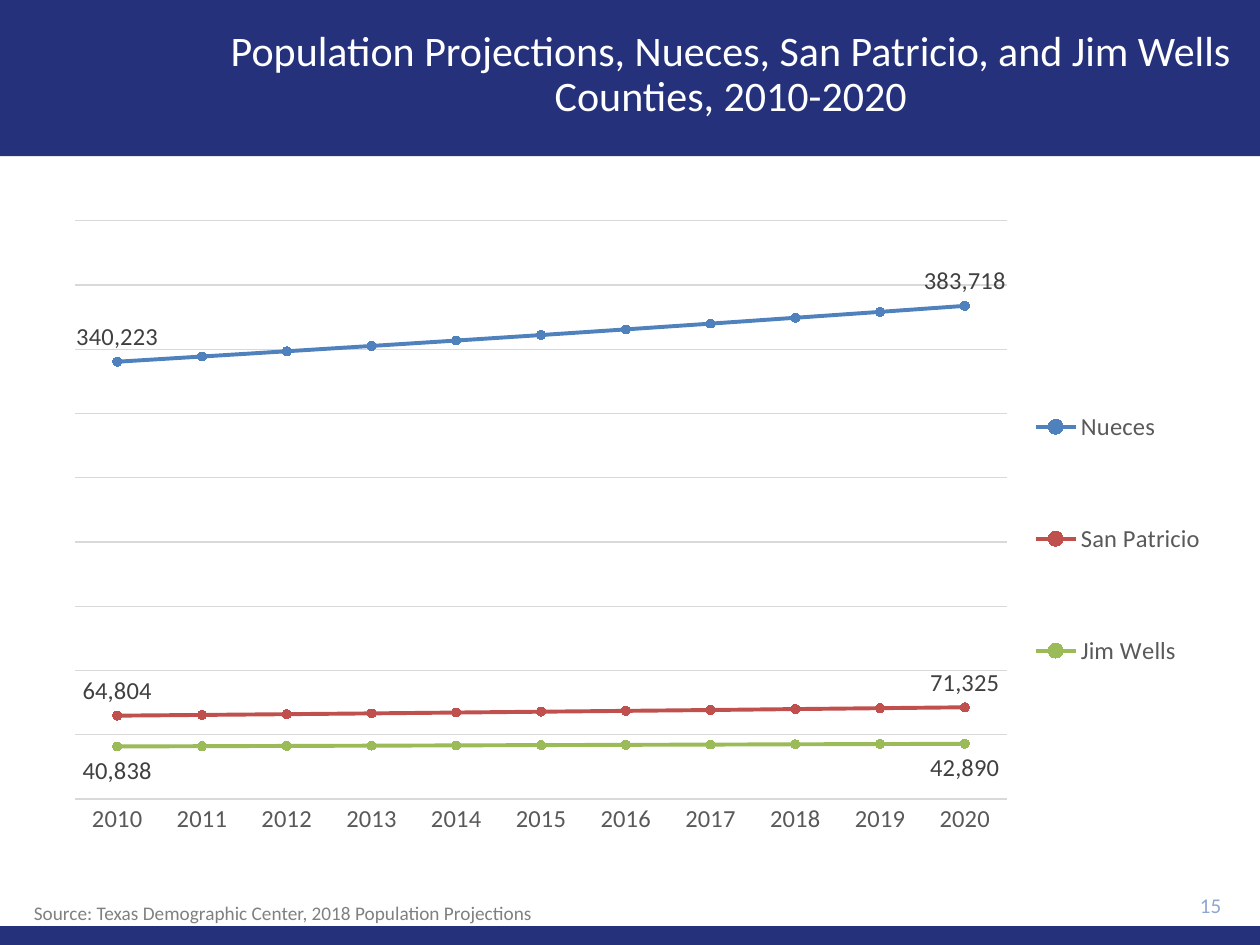
from lxml.etree import SubElement
from pptx import Presentation
from pptx.chart.data import CategoryChartData
from pptx.dml.color import RGBColor
from pptx.enum.chart import (XL_CHART_TYPE, XL_LABEL_POSITION as Pos,
                             XL_LEGEND_POSITION, XL_MARKER_STYLE, XL_TICK_MARK)
from pptx.enum.shapes import MSO_SHAPE
from pptx.enum.text import MSO_ANCHOR as Anchor, PP_ALIGN as Align
from pptx.oxml.ns import qn
from pptx.util import Inches, Pt

COLORS = {
    "band": "25327B", "white": "FFFFFF", "number": "8FA5D1",
    "source": "808080", "axis": "595959", "label": "404040",
    "grid": "D9D9D9", "black": "000000",
    "Nueces": "4F81BD", "San Patricio": "C0504D", "Jim Wells": "9BBB59",
}
YEARS = [str(year) for year in range(2010, 2021)]
COUNTIES = {
    "Nueces": [340223, 344297, 348369, 352497, 356712, 360992,
               365409, 369869, 374431, 379038, 383718],
    "San Patricio": [64804, 65378, 65965, 66556, 67203, 67868,
                     68542, 69197, 69908, 70615, 71325],
    "Jim Wells": [40838, 41038, 41253, 41450, 41678, 41884,
                  42090, 42298, 42509, 42697, 42890],
}


def rgb(name):
    return RGBColor.from_string(COLORS[name])


def style(font, size, color):
    font.name = "Calibri"
    font.size = Pt(size)
    font.bold = False
    font.color.rgb = rgb(color)


def stroke(line, color, width):
    line.color.rgb = rgb(color)
    line.width = Pt(width)


def place(shape, box):
    shape.left, shape.top, shape.width, shape.height = map(Inches, box)


def write(shape, text, size=12, color="black", align=Align.LEFT,
          anchor=Anchor.TOP, wrap=True, spacing=None):
    frame = shape.text_frame
    frame.word_wrap = wrap
    frame.vertical_anchor = anchor
    par = frame.paragraphs[0]
    par.alignment = align
    par.line_spacing = spacing
    run = par.add_run()
    run.text = text
    style(run.font, size, color)


def add_band(slide, top, height):
    band = slide.shapes.add_shape(MSO_SHAPE.RECTANGLE, 0, Inches(top),
                                  Inches(10), Inches(height))
    band.shadow.inherit = False
    band.fill.solid()
    band.fill.fore_color.rgb = rgb("band")
    band.line.fill.background()


def add_title(slide, text):
    title = slide.shapes.title
    place(title, (1.7, 0.1, 8.2, 1))
    write(title, text, size=24, color="white", align=Align.CENTER,
          anchor=Anchor.MIDDLE, spacing=0.9)
    # Bring the title in front of the bands
    slide.shapes._spTree.append(title._element)


def add_note(slide, text, box, **format):
    note = slide.shapes.add_textbox(*map(Inches, box))
    write(note, text, **format)


def set_layout(part, box, inner=False):
    """Fix a chart part at fractions of the chart's size."""
    layout = part.get_or_add_layout() if hasattr(
        part, "get_or_add_layout") else part.find(qn("c:layout"))
    if layout is None:
        layout = SubElement(part, qn("c:layout"))
        part.insert(0, layout)
    manual = SubElement(layout, qn("c:manualLayout"))
    items = [("layoutTarget", "inner")] if inner else []
    items += [("xMode", "edge"), ("yMode", "edge")]
    items += zip("xywh", map(str, box))
    for tag, value in items:
        SubElement(manual, qn(f"c:{tag}")).set("val", value)


def style_axes(chart):
    years = chart.category_axis
    years.major_tick_mark = XL_TICK_MARK.NONE
    years.minor_tick_mark = XL_TICK_MARK.NONE
    style(years.tick_labels.font, 14, "axis")
    stroke(years.format.line, "grid", 0.75)
    people = chart.value_axis
    people.minimum_scale, people.maximum_scale = 0, 450000
    people.major_unit = 50000
    people.has_major_gridlines = True
    stroke(people.major_gridlines.format.line, "grid", 0.75)
    people.visible = False


def style_series(series):
    series.smooth = False
    stroke(series.format.line, series.name, 2.25)
    marker = series.marker
    marker.style = XL_MARKER_STYLE.CIRCLE
    marker.size = 5
    marker.format.fill.solid()
    marker.format.fill.fore_color.rgb = rgb(series.name)
    stroke(marker.format.line, series.name, 0.75)
    series.data_labels.show_value = False
    for index in (0, len(YEARS) - 1):
        label = series.points[index].data_label
        style(label.font, 14, "label")
        label.position = Pos.BELOW if series.name == "Jim Wells" else Pos.ABOVE


def add_lines(slide, box):
    data = CategoryChartData(number_format="#,##0")
    data.categories = YEARS
    for name, values in COUNTIES.items():
        data.add_series(name, values)
    chart = slide.shapes.add_chart(XL_CHART_TYPE.LINE_MARKERS,
                                   *map(Inches, box), data).chart
    style(chart.font, 14, "black")
    chart.has_title = False
    chart.has_legend = True
    legend = chart.legend
    legend.position = XL_LEGEND_POSITION.RIGHT
    legend.include_in_layout = False
    style(legend.font, 14, "axis")
    style_axes(chart)
    for series in chart.plots[0].series:
        style_series(series)
    set_layout(chart._chartSpace.chart.plotArea, (0.02, 0.02, 0.8, 0.9), True)
    if legend._element.find(qn("c:layout")) is None:
        spot = legend._element.find(qn("c:legendPos"))
        layout = legend._element.makeelement(qn("c:layout"))
        spot.addnext(layout)
    set_layout(legend._element, (0.84, 0.19, 0.15, 0.65))


def main():
    deck = Presentation()
    deck.slide_width, deck.slide_height = Inches(10), Inches(7.5)
    slide = deck.slides.add_slide(deck.slide_layouts[5])
    add_band(slide, 0, 1.24)
    add_band(slide, 7.35, 0.15)
    add_title(slide, "Population Projections, Nueces, San Patricio, "
                     "and Jim Wells Counties, 2010-2020")
    add_note(slide, "15", (8.9, 7.01, 0.89, 0.34), color="number",
             align=Align.RIGHT, anchor=Anchor.MIDDLE)
    add_note(slide, "Source: Texas Demographic Center, 2018 Population "
                    "Projections", (0.17, 7.1, 4.38, 0.29), size=11,
             color="source", wrap=False)
    add_lines(slide, (0.41, 1.65, 9.25, 5.1))
    deck.save("out.pptx")


if __name__ == "__main__":
    main()
